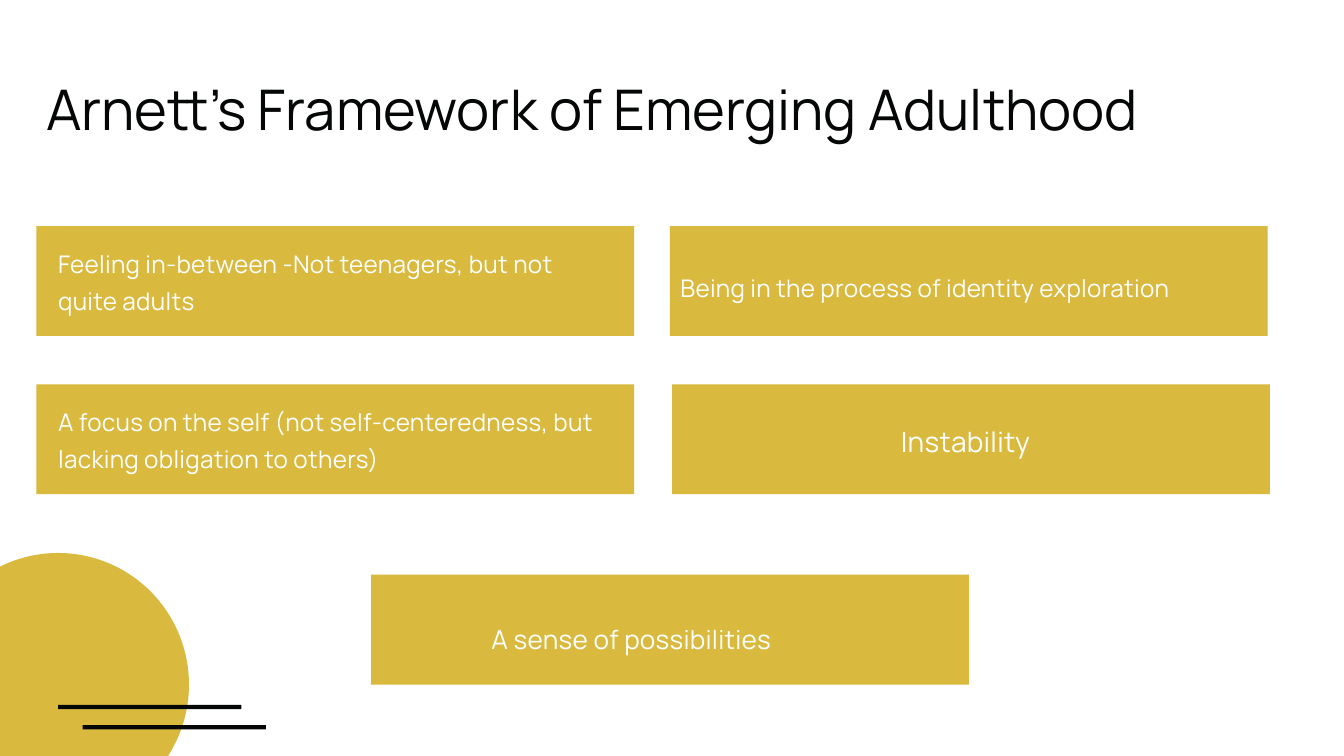
import pptx
import pptx.dml.color
import pptx.enum.shapes
import pptx.util

PX = 9525
FONT = "Manrope"
GOLD, BLACK, WHITE = "D9B93E", "050707", "FFFFFF"
CARD_WIDTH, CARD_HEIGHT, TEXT_WIDTH = 854, 157, 793
SHAPES = pptx.enum.shapes.MSO_SHAPE

CARDS = [
    (52, 323, 31, 23, 26, 39, "Feeling in-between -Not teenagers, but not quite adults"),
    (52, 549, 31, 23, 26, 39, "A focus on the self (not self-centeredness, but lacking obligation to others)"),
    (957, 323, 15, 57, 26, 39, "Being in the process of identity exploration"),
    (960, 549, 327, 46, 30, 45, "Instability"),
    (530, 821, 172, 58, 28, 42, "A sense of possibilities"),
]


def color(hex_string):
    """Return the RGB colour for a hex string."""
    return pptx.dml.color.RGBColor.from_string(hex_string)


def lengths(*pixels):
    """Turn px into EMU."""
    return [pptx.util.Emu(value * PX) for value in pixels]


def add_block(slide, kind, left, top, width, height, fill):
    """Add a plain filled shape without outline or shadow."""
    shape = slide.shapes.add_shape(kind, *lengths(left, top, width, height))
    shape.shadow.inherit = False
    shape.fill.solid()
    shape.fill.fore_color.rgb = color(fill)
    shape.line.fill.background()


def add_text(slide, left, top, width, height, text, size, leading, fill, tracking=0):
    """Add a wrapped text box without margins."""
    frame = slide.shapes.add_textbox(*lengths(left, top, width, height)).text_frame
    frame.word_wrap = True
    frame.margin_left = frame.margin_top = frame.margin_right = frame.margin_bottom = 0
    paragraph = frame.paragraphs[0]
    paragraph.text = text
    paragraph.line_spacing = pptx.util.Pt(leading)
    paragraph.font.name = FONT
    paragraph.font.size = pptx.util.Pt(size)
    paragraph.font.color.rgb = color(fill)
    paragraph.font._rPr.set("spc", str(tracking))


def add_card(slide, left, top, text_left, text_top, size, leading, text):
    """Add a gold card with its text offset from the card's corner."""
    add_block(slide, SHAPES.RECTANGLE, left, top, CARD_WIDTH, CARD_HEIGHT, GOLD)
    width = min(TEXT_WIDTH, CARD_WIDTH - text_left)
    height = CARD_HEIGHT - 2 * text_top
    add_text(slide, left + text_left, top + text_top, width, height,
             text, size, leading, WHITE, 30)


def add_corner(slide, left, top):
    """Add the corner circle with its two offset bars."""
    add_block(slide, SHAPES.OVAL, left, top, 374, 376, GOLD)
    for bar_left, bar_top in ((187, 217), (222, 246)):
        add_block(slide, SHAPES.RECTANGLE, left + bar_left, top + bar_top, 262, 6, BLACK)


def main():
    """Build and save the slide."""
    presentation = pptx.Presentation()
    presentation.slide_width, presentation.slide_height = lengths(1920, 1080)
    slide = presentation.slides.add_slide(presentation.slide_layouts[6])
    add_text(slide, 66, 107, 1811, 96, "Arnett's Framework of Emerging Adulthood", 60, 72, BLACK)
    add_corner(slide, -104, 790)
    for card in CARDS:
        add_card(slide, *card)
    presentation.save("out.pptx")


if __name__ == "__main__":
    main()
